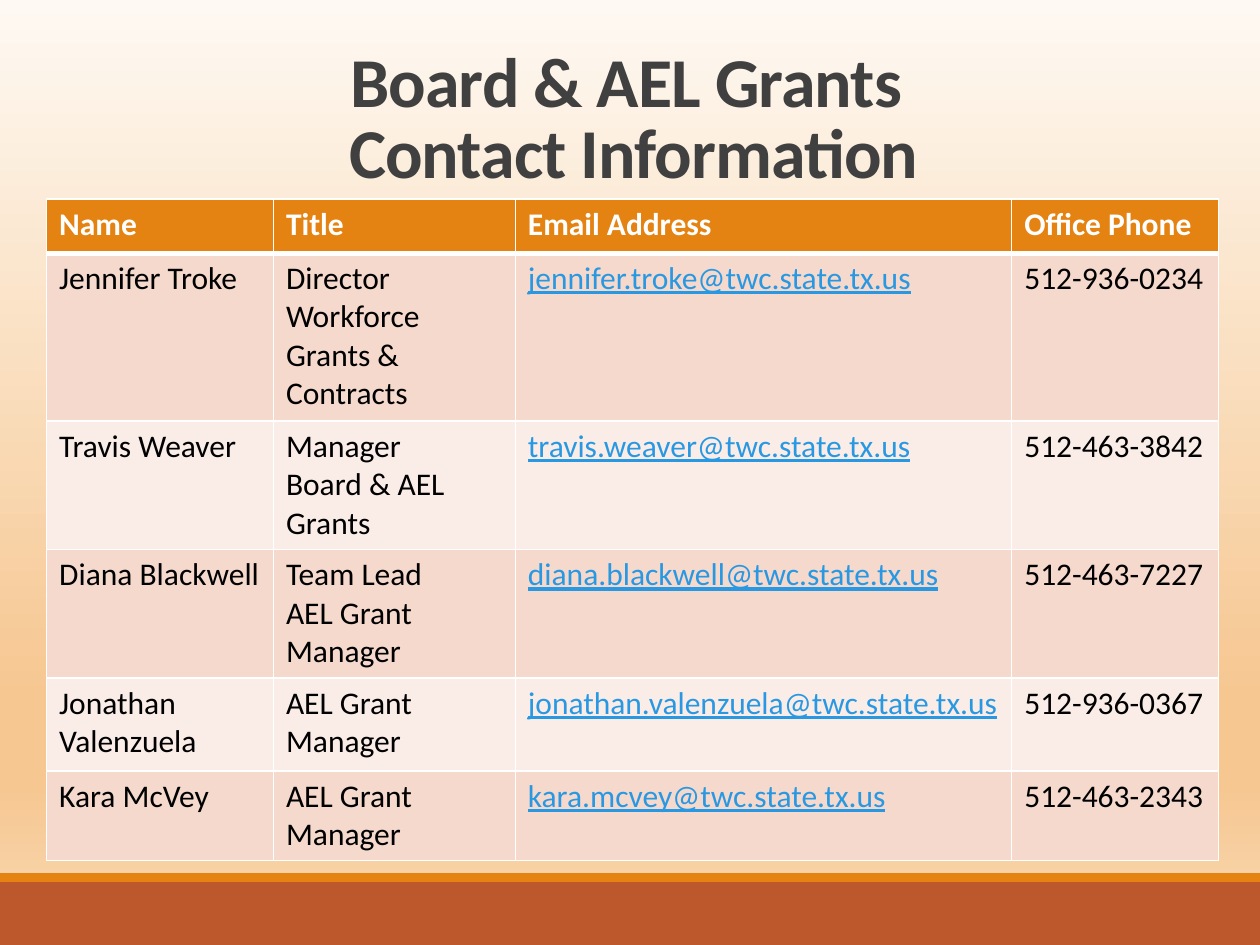
from lxml.etree import SubElement
from pptx import Presentation
from pptx.dml.color import RGBColor
from pptx.enum.shapes import MSO_SHAPE as Shape
from pptx.enum.text import MSO_ANCHOR as Anchor, PP_ALIGN as Align
from pptx.oxml.ns import qn
from pptx.util import Inches, Pt

COLORS = {
    "title": "404040", "text": "000000", "email": "2998E3", "white": "FFFFFF",
    "orange": "E48312", "rust": "BD582C", "odd_row": "F5D9CC", "even_row": "FAEDE7",
}
BACKGROUND_STOPS = [(0, "FEF9F3"), (74, "F6C791"), (83, "F6C791"), (100, "F9DAB6")]
TITLE_LINES = ["Board & AEL Grants ", "Contact Information"]
HEADINGS = ["Name", "Title", "Email Address", "Office Phone"]
EMAIL_COLUMN = HEADINGS.index("Email Address")
CONTACTS = [
    ["Jennifer Troke", "Director\nWorkforce Grants & Contracts",
     "jennifer.troke@twc.state.tx.us", "512-936-0234"],
    ["Travis Weaver", "Manager\nBoard & AEL Grants",
     "travis.weaver@twc.state.tx.us", "512-463-3842"],
    ["Diana Blackwell", "Team Lead\nAEL Grant Manager",
     "diana.blackwell@twc.state.tx.us", "512-463-7227"],
    ["Jonathan Valenzuela", "AEL Grant Manager",
     "jonathan.valenzuela@twc.state.tx.us", "512-936-0367"],
    ["Kara McVey", "AEL Grant Manager",
     "kara.mcvey@twc.state.tx.us", "512-463-2343"],
]
COLUMN_WIDTHS = [1.8, 1.92, 3.94, 1.64]
ROW_HEIGHTS = [0.43, 1.33, 1.02, 1.02, 0.74, 0.71]


def rgb(name):
    return RGBColor.from_string(COLORS[name])


class SlideBuilder:
    font = "Calibri"

    def __init__(self, slide):
        self.slide = slide

    def background(self, stops):
        fill = self.slide.background.fill
        fill.gradient()
        fill.gradient_angle = 270
        stop_list = self.slide.element.find(".//" + qn("a:gsLst"))
        for old_stop in list(stop_list):
            stop_list.remove(old_stop)
        for percent, color in stops:
            stop = SubElement(stop_list, qn("a:gs"), pos=str(percent * 1000))
            SubElement(stop, qn("a:srgbClr"), val=color)

    def band(self, top, height, color):
        band = self.slide.shapes.add_shape(
            Shape.RECTANGLE, 0, Inches(top), Inches(10), Inches(height))
        band.shadow.inherit = False
        band.fill.solid()
        band.fill.fore_color.rgb = rgb(color)
        band.line.fill.background()

    def run(self, paragraph, text, size, color, bold=False, underline=False):
        run = paragraph.add_run()
        run.text = text
        font = run.font
        font.name, font.size, font.bold = self.font, Pt(size), bold
        font.color.rgb = rgb(color)
        if underline:
            font.underline = True
        return run

    def title(self, lines, left, top, width, height):
        frame = self.slide.shapes.add_textbox(
            Inches(left), Inches(top), Inches(width), Inches(height)).text_frame
        frame.word_wrap = True
        frame.vertical_anchor = Anchor.BOTTOM
        paragraph = frame.paragraphs[0]
        paragraph.alignment = Align.CENTER
        paragraph.line_spacing = 0.85
        for index, line in enumerate(lines):
            if index:
                paragraph.add_line_break()
            run = self.run(paragraph, line, 40, "title", bold=True)
            run.font._element.set("spc", "-50")

    def borders(self, cell, top, bottom):
        properties = cell._tc.get_or_add_tcPr()
        for side, points in (("L", 1), ("R", 1), ("T", top), ("B", bottom)):
            border = SubElement(properties, qn(f"a:ln{side}"), w=str(Pt(points)))
            fill = SubElement(border, qn("a:solidFill"))
            SubElement(fill, qn("a:srgbClr"), val=COLORS["white"])

    def cell(self, cell, text, fill, color, **style):
        cell.fill.solid()
        cell.fill.fore_color.rgb = rgb(fill)
        frame = cell.text_frame
        for index, line in enumerate(text.split("\n")):
            paragraph = frame.add_paragraph() if index else frame.paragraphs[0]
            self.run(paragraph, line, 18, color, **style)

    def contact_table(self, left, top):
        rows = [HEADINGS] + CONTACTS
        table = self.slide.shapes.add_table(
            len(rows), len(HEADINGS), Inches(left), Inches(top),
            Inches(sum(COLUMN_WIDTHS)), Inches(sum(ROW_HEIGHTS))).table
        for column, width in zip(table.columns, COLUMN_WIDTHS):
            column.width = Inches(width)
        for r, (values, height) in enumerate(zip(rows, ROW_HEIGHTS)):
            table.rows[r].height = Inches(height)
            for c, value in enumerate(values):
                cell = table.cell(r, c)
                # A thick rule parts the headings from the contacts
                self.borders(cell, top=3 if r == 1 else 1, bottom=3 if r == 0 else 1)
                if r == 0:
                    self.cell(cell, value, "orange", "white", bold=True)
                else:
                    is_email = c == EMAIL_COLUMN
                    self.cell(cell, value, "odd_row" if r % 2 else "even_row",
                              "email" if is_email else "text", underline=is_email)


def main():
    deck = Presentation()
    deck.slide_width, deck.slide_height = Inches(10), Inches(7.5)
    builder = SlideBuilder(deck.slides.add_slide(deck.slide_layouts[6]))

    # Backdrop and footer bands
    builder.background(BACKGROUND_STOPS)
    builder.band(7, 0.5, "rust")
    builder.band(6.93, 0.07, "orange")

    # Title and contacts
    builder.title(TITLE_LINES, 0.78, 0.33, 8.5, 1.25)
    builder.contact_table(0.37, 1.58)

    deck.save("out.pptx")


if __name__ == "__main__":
    main()
